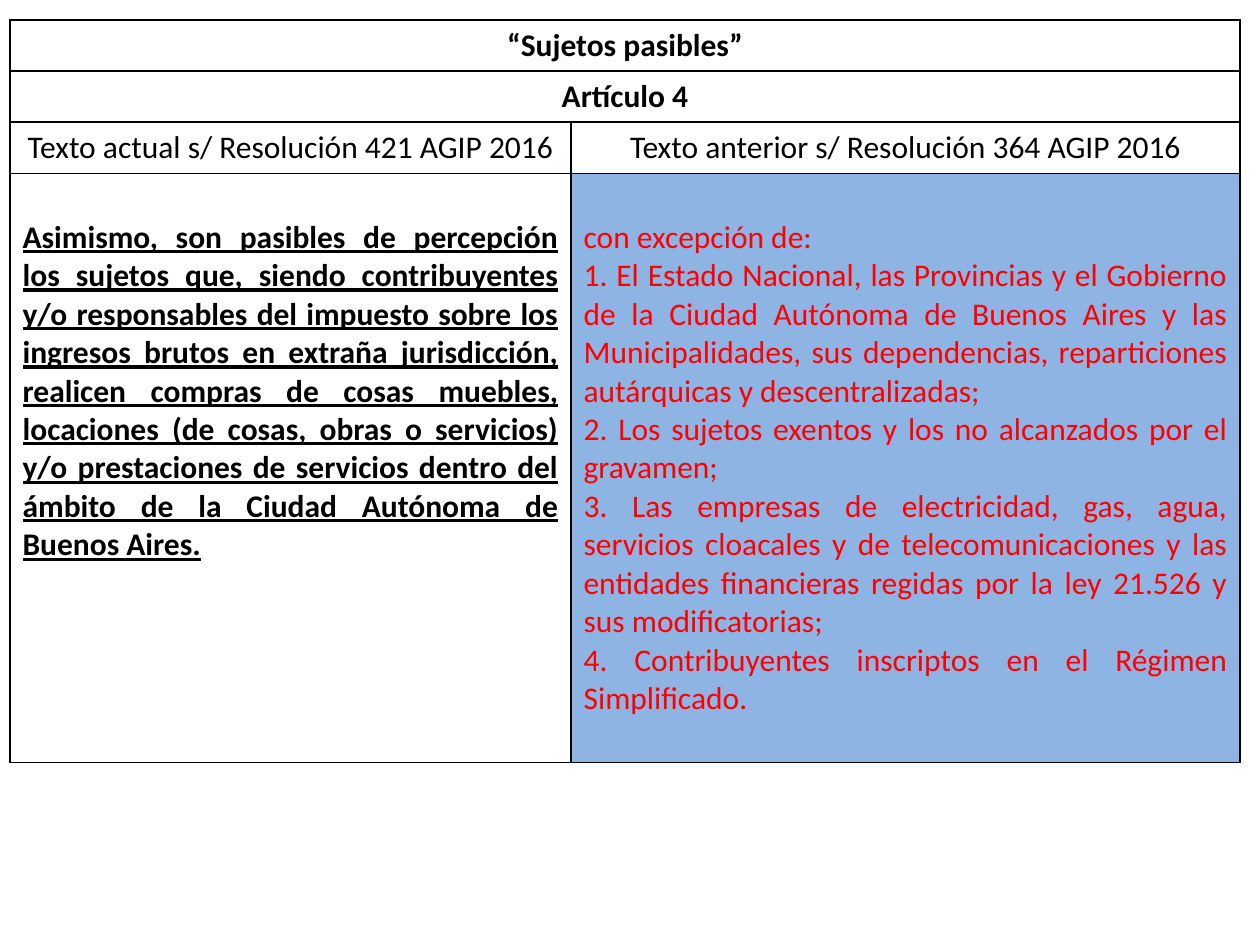
from dataclasses import dataclass

from lxml import etree
from pptx import Presentation
from pptx import util as u
from pptx.dml import color
from pptx.enum import text
from pptx.oxml import ns

PX = 914400 / 126


@dataclass(frozen=True)
class Theme:
    font: str = "Calibri"
    size: int = 18
    ink: str = "000000"
    old_text: str = "FF0000"
    old_fill: str = "8EB4E3"
    border: str = "000000"
    border_width: int = 1


def px(length):
    """Turn whole pixels into EMU."""
    return u.Emu(round(length * PX))


class SlideBuilder:
    """Holds the theme and the current slide."""

    def __init__(self, slide, theme):
        self.slide = slide
        self.theme = theme

    def table(self, left, top, widths, heights):
        """Add a plain table with bordered, unfilled cells."""
        shape = self.slide.shapes.add_table(
            len(heights), len(widths), px(left), px(top), px(sum(widths)), px(sum(heights)))
        table = shape.table
        table.first_row = table.horz_banding = False
        for column, width in zip(table.columns, widths):
            column.width = px(width)
        for row, height in zip(table.rows, heights):
            row.height = px(height)
        for cell in table.iter_cells():
            cell.fill.background()
            self.borders(cell)
        return table

    def borders(self, cell):
        """Draw the four sides of a cell."""
        properties = cell._tc.get_or_add_tcPr()
        for index, side in enumerate(("lnL", "lnR", "lnT", "lnB")):
            line = etree.Element(ns.qn(f"a:{side}"), w=str(u.Pt(self.theme.border_width)))
            fill = etree.SubElement(line, ns.qn("a:solidFill"))
            etree.SubElement(fill, ns.qn("a:srgbClr"), val=self.theme.border)
            properties.insert(index, line)

    def cell(self, cell, lines, align, ink=None, fill=None, top=None, **formats):
        """Write paragraphs into a cell with one format."""
        if fill:
            cell.fill.solid()
            cell.fill.fore_color.rgb = color.RGBColor.from_string(fill)
        if top:
            cell.margin_top = px(top)
        cell.text_frame.text = "\n".join(lines)
        formats = {"name": self.theme.font, "size": u.Pt(self.theme.size),
                   "bold": False, **formats}
        for paragraph in cell.text_frame.paragraphs:
            paragraph.alignment = align
            for run in paragraph.runs:
                for name, value in formats.items():
                    setattr(run.font, name, value)
                run.font.color.rgb = color.RGBColor.from_string(ink or self.theme.ink)


CURRENT_TEXT = [
    "Asimismo, son pasibles de percepción los sujetos que, siendo contribuyentes y/o "
    "responsables del impuesto sobre los ingresos brutos en extraña jurisdicción, realicen "
    "compras de cosas muebles, locaciones (de cosas, obras o servicios) y/o prestaciones de "
    "servicios dentro del ámbito de la Ciudad Autónoma de Buenos Aires.",
]
PREVIOUS_TEXT = [
    "con excepción de:",
    "1. El Estado Nacional, las Provincias y el Gobierno de la Ciudad Autónoma de Buenos Aires "
    "y las Municipalidades, sus dependencias, reparticiones autárquicas y descentralizadas;",
    "2. Los sujetos exentos y los no alcanzados por el gravamen;",
    "3. Las empresas de electricidad, gas, agua, servicios cloacales y de telecomunicaciones y "
    "las entidades financieras regidas por la ley 21.526 y sus modificatorias;",
    "4. Contribuyentes inscriptos en el Régimen Simplificado.",
]
HEADINGS = ["“Sujetos pasibles”", "Artículo 4"]
COLUMN_TITLES = ["Texto actual s/ Resolución 421 AGIP 2016",
                 "Texto anterior s/ Resolución 364 AGIP 2016"]


def main():
    """Build the comparison slide and save it."""
    presentation = Presentation()
    presentation.slide_width, presentation.slide_height = px(1260), px(945)
    theme = Theme()
    builder = SlideBuilder(presentation.slides.add_slide(presentation.slide_layouts[6]), theme)
    center, justify = text.PP_ALIGN.CENTER, text.PP_ALIGN.JUSTIFY

    table = builder.table(10, 20, [561, 669], [51, 51, 51, 589])
    for row, heading in enumerate(HEADINGS):
        table.cell(row, 0).merge(table.cell(row, 1))
        builder.cell(table.cell(row, 0), [heading], center, bold=True)
    for column, title in enumerate(COLUMN_TITLES):
        builder.cell(table.cell(2, column), [title], center)
    builder.cell(table.cell(3, 0), CURRENT_TEXT, justify, top=45, bold=True, underline=True)
    builder.cell(table.cell(3, 1), PREVIOUS_TEXT, justify, top=45,
                 ink=theme.old_text, fill=theme.old_fill)

    presentation.save("out.pptx")


if __name__ == "__main__":
    main()
